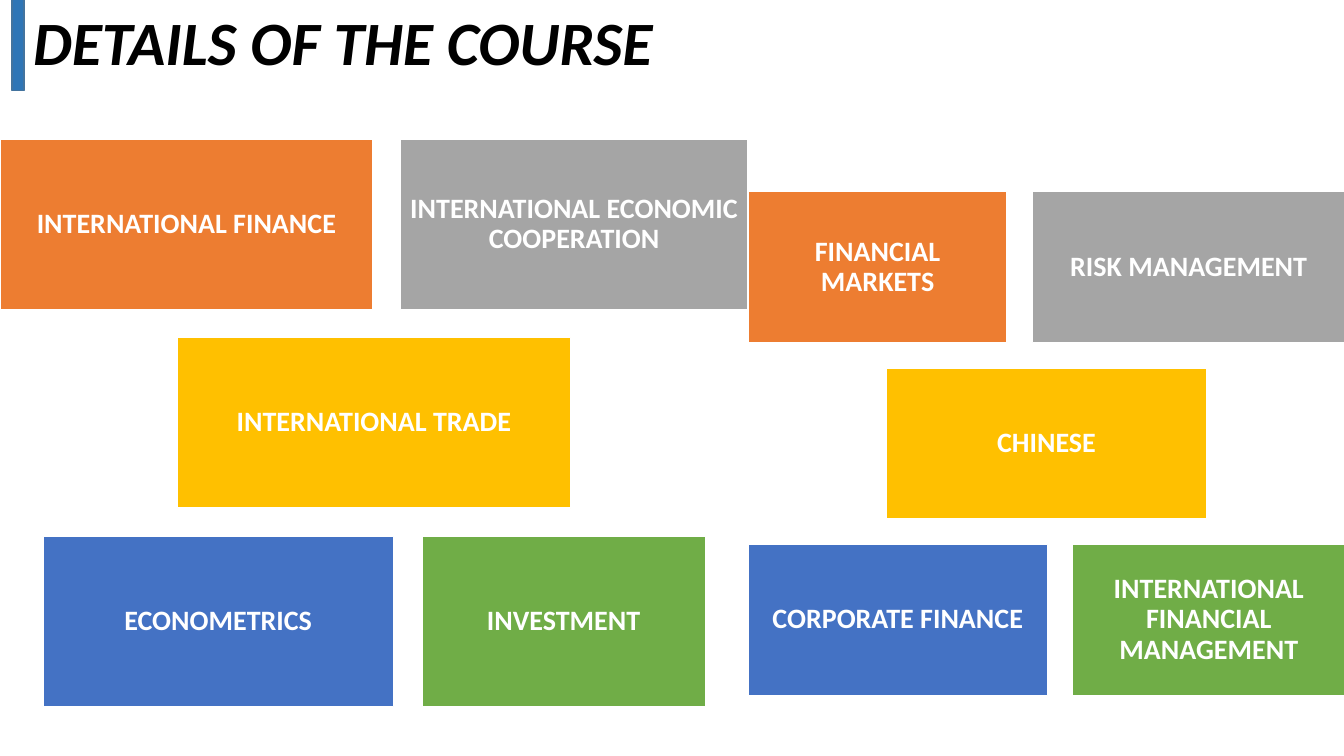
from pptx import Presentation
from pptx.dml.color import RGBColor
from pptx.enum.shapes import MSO_SHAPE
from pptx.enum.text import MSO_ANCHOR, PP_ALIGN
from pptx.util import Inches, Pt

ORANGE, GRAY, GOLD, BLUE, GREEN = "ED7D31", "A5A5A5", "FFC000", "4472C4", "70AD47"

# Each row holds (course, color, width) and is centered in its block.
LEFT_COURSES = [
    [("INTERNATIONAL FINANCE", ORANGE, 3.69),
     ("INTERNATIONAL ECONOMIC COOPERATION", GRAY, 3.44)],
    [("INTERNATIONAL TRADE", GOLD, 3.9)],
    [("ECONOMETRICS", BLUE, 3.48), ("INVESTMENT", GREEN, 2.81)],
]
RIGHT_COURSES = [
    [("FINANCIAL MARKETS", ORANGE, 2.57), ("RISK MANAGEMENT", GRAY, 3.1)],
    [("CHINESE", GOLD, 3.17)],
    [("CORPORATE FINANCE", BLUE, 2.97),
     ("INTERNATIONAL FINANCIAL MANAGEMENT", GREEN, 2.7)],
]


def color(value):
    return RGBColor.from_string(value)


def write_text(shape, text, *, font="Calibri", size=20, fill="FFFFFF", italic=False,
               align=PP_ALIGN.CENTER, space_after=0, margins=(0.08,) * 4):
    frame = shape.text_frame
    frame.word_wrap = True
    frame.vertical_anchor = MSO_ANCHOR.MIDDLE
    (frame.margin_left, frame.margin_top,
     frame.margin_right, frame.margin_bottom) = map(Inches, margins)
    paragraph = frame.paragraphs[0]
    paragraph.alignment = align
    paragraph.line_spacing = 0.9
    paragraph.space_after = Pt(space_after)
    run = paragraph.add_run()
    run.text = text
    run.font.name = font
    run.font.size = Pt(size)
    run.font.bold = True
    run.font.italic = italic
    run.font.color.rgb = color(fill)


class CourseSlide:
    def __init__(self, presentation):
        self.slide = presentation.slides.add_slide(presentation.slide_layouts[6])
        self.line_width = Pt(1)

    def title(self, text, left, top, width, height):
        shape = self.slide.shapes.add_textbox(
            Inches(left), Inches(top), Inches(width), Inches(height))
        write_text(shape, text, size=44, fill="000000", italic=True,
                   align=PP_ALIGN.LEFT, margins=(0.1, 0.05, 0.1, 0.05))

    def rectangle(self, left, top, width, height, fill, line="FFFFFF"):
        shape = self.slide.shapes.add_shape(
            MSO_SHAPE.RECTANGLE, Inches(left), Inches(top), Inches(width), Inches(height))
        shape.shadow.inherit = False
        shape.fill.solid()
        shape.fill.fore_color.rgb = color(fill)
        shape.line.color.rgb = color(line)
        shape.line.width = self.line_width
        return shape

    def course_block(self, rows, center, top, height, gap):
        for row in rows:
            row_width = sum(width for _, _, width in row) + gap * (len(row) - 1)
            left = center - row_width / 2
            for course, fill, width in row:
                box = self.rectangle(left, top, width, height, fill)
                write_text(box, course, space_after=7)
                left += width + gap
            top += height + gap


def main():
    presentation = Presentation()
    presentation.slide_width = Inches(13.33)
    presentation.slide_height = Inches(7.5)
    page = CourseSlide(presentation)
    page.title("DETAILS OF THE COURSE", 0.23, 0, 8.11, 0.9)
    page.rectangle(0.12, -0.03, 0.12, 0.93, "2E75B6", line="43739E")
    page.course_block(LEFT_COURSES, center=3.71, top=1.38, height=1.69, gap=0.28)
    page.course_block(RIGHT_COURSES, center=10.38, top=1.9, height=1.5, gap=0.25)
    presentation.save("out.pptx")


if __name__ == "__main__":
    main()
